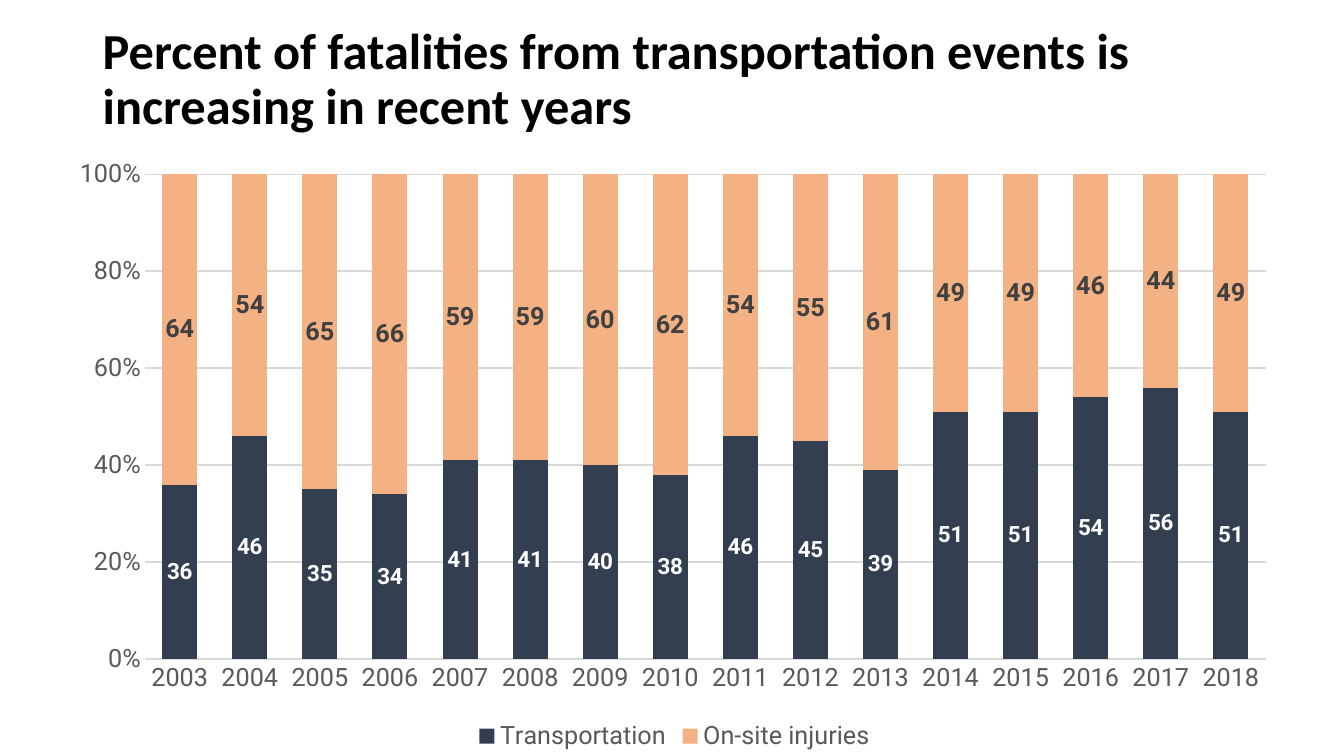
"""Build a slide with a stacked column chart of fatality shares by year."""
from pptx import Presentation
from pptx.chart.data import CategoryChartData
from pptx.dml.color import RGBColor
from pptx.enum.chart import XL_CHART_TYPE, XL_LABEL_POSITION, XL_LEGEND_POSITION, XL_TICK_MARK
from pptx.enum.text import MSO_ANCHOR
from pptx.oxml import parse_xml
from pptx.oxml.ns import nsdecls, qn
from pptx.util import Inches, Pt

BLACK = RGBColor(0x00, 0x00, 0x00)
WHITE = RGBColor(0xFF, 0xFF, 0xFF)
NAVY = RGBColor(0x33, 0x3F, 0x50)
PEACH = RGBColor(0xF4, 0xB1, 0x83)
CHARCOAL = RGBColor(0x40, 0x40, 0x40)
GRAY = RGBColor(0x59, 0x59, 0x59)
LIGHT_GRAY = RGBColor(0xD9, 0xD9, 0xD9)

TITLE = "Percent of fatalities from transportation events is increasing in recent years"
YEARS = [str(year) for year in range(2003, 2019)]
SERIES = [
    {"name": "Transportation", "fill": NAVY, "label_color": WHITE, "label_size": 16,
     "values": (36, 46, 35, 34, 41, 41, 40, 38, 46, 45, 39, 51, 51, 54, 56, 51)},
    {"name": "On-site injuries", "fill": PEACH, "label_color": CHARCOAL, "label_size": 18,
     "values": (64, 54, 65, 66, 59, 59, 60, 62, 54, 55, 61, 49, 49, 46, 44, 49)},
]
TITLE_BOX = (0.92, 0.25, 11.5, 1.1)
CHART_BOX = (0.58, 1.49, 12.22, 6.01)
PLOT_FRACTIONS = {"x": 0.07, "y": 0.04, "w": 0.91, "h": 0.8}
VALUE_SCALE = {"minimum_scale": 0, "maximum_scale": 1, "major_unit": 0.2}
LABEL_FORMAT = {"show_value": True, "number_format": "0", "number_format_is_linked": False,
                "position": XL_LABEL_POSITION.CENTER}


def set_attributes(target, values):
    for name, value in values.items():
        setattr(target, name, value)


def set_font(font, name, size, color, bold=False):
    set_attributes(font, {"name": name, "size": Pt(size), "bold": bold})
    font.color.rgb = color


def set_line(line, color, width):
    line.color.rgb = color
    line.width = Pt(width)


def add_title(slide):
    frame = slide.shapes.add_textbox(*map(Inches, TITLE_BOX)).text_frame
    set_attributes(frame, {"word_wrap": True, "vertical_anchor": MSO_ANCHOR.MIDDLE})
    paragraph = frame.paragraphs[0]
    paragraph.line_spacing = 0.9
    run = paragraph.add_run()
    run.text = TITLE
    set_font(run.font, "Calibri", 36, BLACK, True)


def place_plot(chart):
    plot_area = chart.plots[0]._element.getparent()
    for layout in plot_area.findall(qn("c:layout")):
        plot_area.remove(layout)
    modes = "".join(f'<c:{key}Mode val="edge"/>' for key in "xy")
    sizes = "".join(f'<c:{key} val="{value}"/>' for key, value in PLOT_FRACTIONS.items())
    plot_area.insert(0, parse_xml(
        f'<c:layout {nsdecls("c")}><c:manualLayout><c:layoutTarget val="inner"/>'
        f'{modes}{sizes}</c:manualLayout></c:layout>'))


def add_fatality_chart(slide):
    data = CategoryChartData()
    data.categories = YEARS
    for item in SERIES:
        data.add_series(item["name"], item["values"])
    chart = slide.shapes.add_chart(
        XL_CHART_TYPE.COLUMN_STACKED_100, *map(Inches, CHART_BOX), data).chart
    set_attributes(chart, {"has_title": False, "has_legend": True})
    set_font(chart.font, "Calibri", 10, BLACK)
    set_attributes(chart.legend, {"position": XL_LEGEND_POSITION.BOTTOM,
                                  "include_in_layout": False})
    set_font(chart.legend.font, "Roboto", 18, GRAY)

    for axis in (chart.category_axis, chart.value_axis):
        set_attributes(axis, {"major_tick_mark": XL_TICK_MARK.NONE,
                              "minor_tick_mark": XL_TICK_MARK.NONE})
        set_font(axis.tick_labels.font, "Roboto", 18, GRAY)
    set_line(chart.category_axis.format.line, LIGHT_GRAY, 0.75)
    value_axis = chart.value_axis
    set_attributes(value_axis, VALUE_SCALE)
    set_attributes(value_axis.tick_labels, {"number_format": "0%",
                                            "number_format_is_linked": False})
    value_axis.format.line.fill.background()
    set_line(value_axis.major_gridlines.format.line, LIGHT_GRAY, 1.25)

    plot = chart.plots[0]
    set_attributes(plot, {"gap_width": 100, "overlap": 100, "vary_by_categories": False})
    for series, item in zip(plot.series, SERIES):
        series.format.fill.solid()
        series.format.fill.fore_color.rgb = item["fill"]
        set_attributes(series.data_labels, LABEL_FORMAT)
        set_font(series.data_labels.font, "Roboto", item["label_size"], item["label_color"], True)
    place_plot(chart)


def main():
    presentation = Presentation()
    set_attributes(presentation, {"slide_width": Inches(13.33), "slide_height": Inches(7.5)})
    slide = presentation.slides.add_slide(presentation.slide_layouts[6])
    add_title(slide)
    add_fatality_chart(slide)
    presentation.save("out.pptx")


if __name__ == "__main__":
    main()
